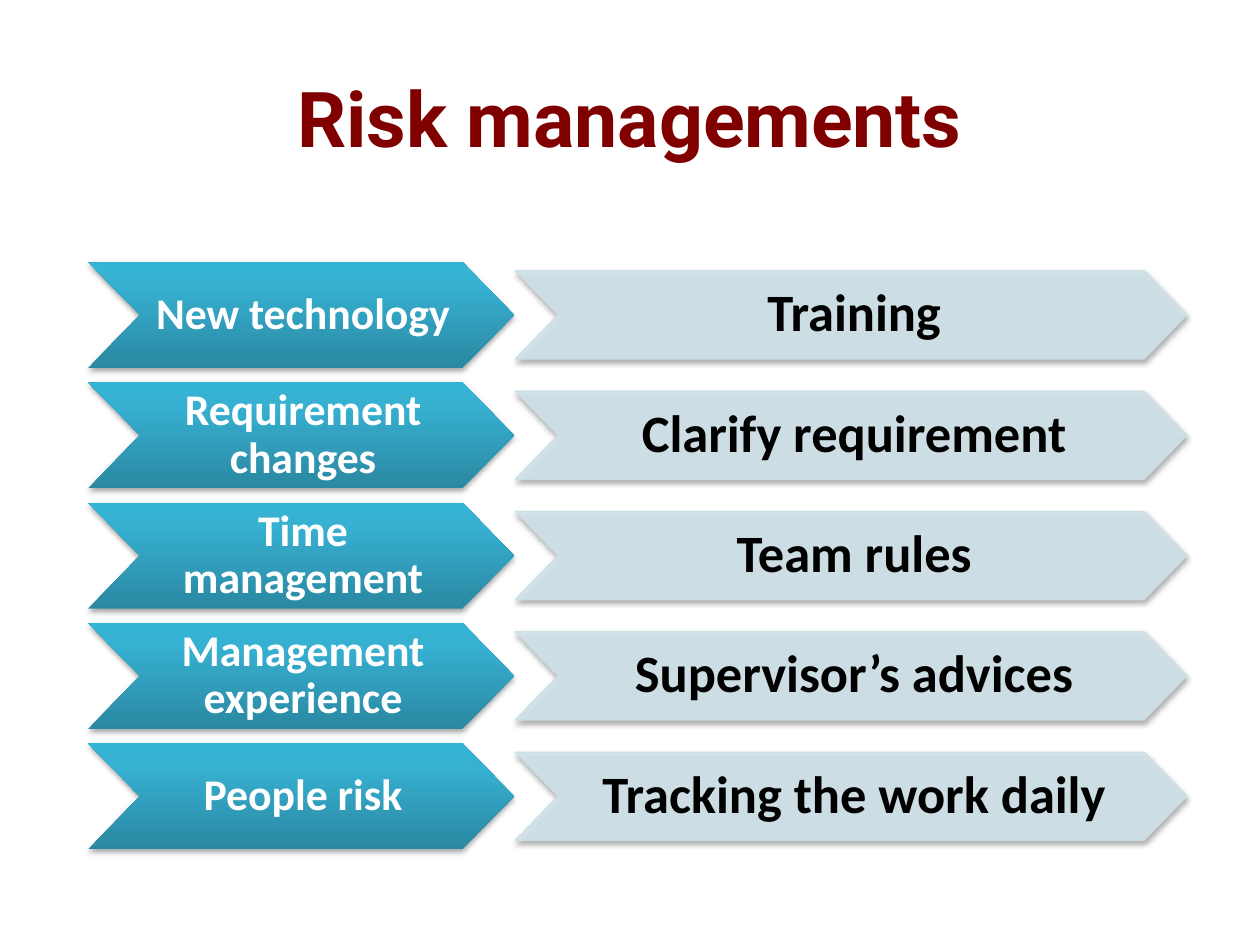
from copy import deepcopy
from dataclasses import dataclass

from lxml import etree
from pptx import Presentation
from pptx.dml.color import RGBColor
from pptx.enum import text
from pptx.oxml import ns
from pptx.util import Inches, Pt


@dataclass(frozen=True)
class Theme:
    title_color: str = "800000"
    risk_color: str = "FFFFFF"
    response_color: str = "000000"
    risk_gradient: tuple = ((0, "2A88A2"), (0.8, "37B1D2"), (1, "34B4D6"))
    response_fill: str = "D0E3EA"
    response_line: str = "CBDEE5"
    shadow: str = "000000"
    title_font: str = "Roboto"
    body_font: str = "Calibri"
    title_size: int = 44
    risk_size: int = 25
    response_size: int = 30


THEME = Theme()

RISKS = [
    ("New technology", "Training"),
    ("Requirement changes", "Clarify requirement"),
    ("Time management", "Team rules"),
    ("Management experience", "Supervisor’s advices"),
    ("People risk", "Tracking the work daily"),
]

FIRST_CENTER, LAST_CENTER = 2.5, 6.32
RISK_LEFT, RISK_WIDTH, RISK_HEIGHT, RISK_TIP = 0.7, 3.38, 0.84, 0.41
RESPONSE_LEFT, RESPONSE_WIDTH, RESPONSE_HEIGHT, RESPONSE_TIP = 4.09, 5.33, 0.7, 0.34


def rgb(value):
    return RGBColor.from_string(value)


def write(shape, words, *, font, size, color, spacing=None, insets=None):
    """Put one bold, centred paragraph into the shape."""
    frame = shape.text_frame
    frame.word_wrap = True
    frame.vertical_anchor = text.MSO_ANCHOR.MIDDLE
    if insets:
        frame.margin_left, frame.margin_right = map(Inches, insets)
        frame.margin_top = frame.margin_bottom = Inches(0.02)
    paragraph = frame.paragraphs[0]
    paragraph.alignment = text.PP_ALIGN.CENTER
    if spacing:
        paragraph.line_spacing = spacing
    run = paragraph.add_run()
    run.text = words
    run.font.name, run.font.size, run.font.bold = font, Pt(size), True
    run.font.color.rgb = rgb(color)


def add_color(parent, value, alpha):
    color = etree.SubElement(parent, ns.qn("a:srgbClr"), val=value)
    etree.SubElement(color, ns.qn("a:alpha"), val=str(alpha * 1000))


def add_shadow(shape):
    shape.shadow.inherit = False
    effects = shape.element.spPr.find(ns.qn("a:effectLst"))
    shadow = etree.SubElement(
        effects, ns.qn("a:outerShdw"), blurRad="40000", dist="23000",
        dir="5400000", rotWithShape="0")
    add_color(shadow, THEME.shadow, 35)


def add_arrow(group, left, center, width, height, tip):
    """Draw a notched arrow pointing right around a centre line."""
    right, top, bottom = left + width, center - height / 2, center + height / 2
    outline = group.shapes.build_freeform(Inches(left), Inches(top))
    corners = [(right - tip, top), (right, center), (right - tip, bottom),
               (left, bottom), (left + tip, center)]
    outline.add_line_segments([(Inches(x), Inches(y)) for x, y in corners])
    arrow = outline.convert_to_shape()
    add_shadow(arrow)
    return arrow


def add_risk(group, center, words):
    arrow = add_arrow(group, RISK_LEFT, center, RISK_WIDTH, RISK_HEIGHT, RISK_TIP)
    arrow.fill.gradient()
    arrow.fill.gradient_angle = 90
    stops = next(arrow.element.spPr.iter(ns.qn("a:gsLst")))
    stops.append(deepcopy(stops[0]))
    for stop, (position, color) in zip(arrow.fill.gradient_stops, THEME.risk_gradient):
        stop.position = position
        stop.color.rgb = rgb(color)
    arrow.line.fill.background()
    write(arrow, words, font=THEME.body_font, size=THEME.risk_size,
          color=THEME.risk_color, spacing=0.9, insets=(0.43, 0.4))


def add_response(group, center, words):
    arrow = add_arrow(group, RESPONSE_LEFT, center, RESPONSE_WIDTH,
                      RESPONSE_HEIGHT, RESPONSE_TIP)
    arrow.fill.solid()
    arrow.fill.fore_color.rgb = rgb(THEME.response_fill)
    arrow.line.width = Pt(0.75)
    arrow.line.color.rgb = rgb(THEME.response_line)
    for color in arrow.element.spPr.findall(".//" + ns.qn("a:solidFill") + "/*"):
        etree.SubElement(color, ns.qn("a:alpha"), val="90000")
    write(arrow, words, font=THEME.body_font, size=THEME.response_size,
          color=THEME.response_color, spacing=0.9, insets=(0.38, 0.33))


def add_title(slide, words):
    title = slide.shapes.title
    title.left, title.top = Inches(0.5), Inches(0.3)
    title.width, title.height = Inches(9), Inches(1.25)
    write(title, words, font=THEME.title_font, size=THEME.title_size,
          color=THEME.title_color)


def main():
    deck = Presentation()
    deck.slide_width, deck.slide_height = Inches(10), Inches(7.5)
    slide = deck.slides.add_slide(deck.slide_layouts.get_by_name("Title Only"))
    add_title(slide, "Risk managements")
    group = slide.shapes.add_group_shape()
    pitch = (LAST_CENTER - FIRST_CENTER) / (len(RISKS) - 1)
    for row, (risk, response) in enumerate(RISKS):
        center = FIRST_CENTER + row * pitch
        add_risk(group, center, risk)
        add_response(group, center, response)
    deck.save("out.pptx")


if __name__ == "__main__":
    main()
